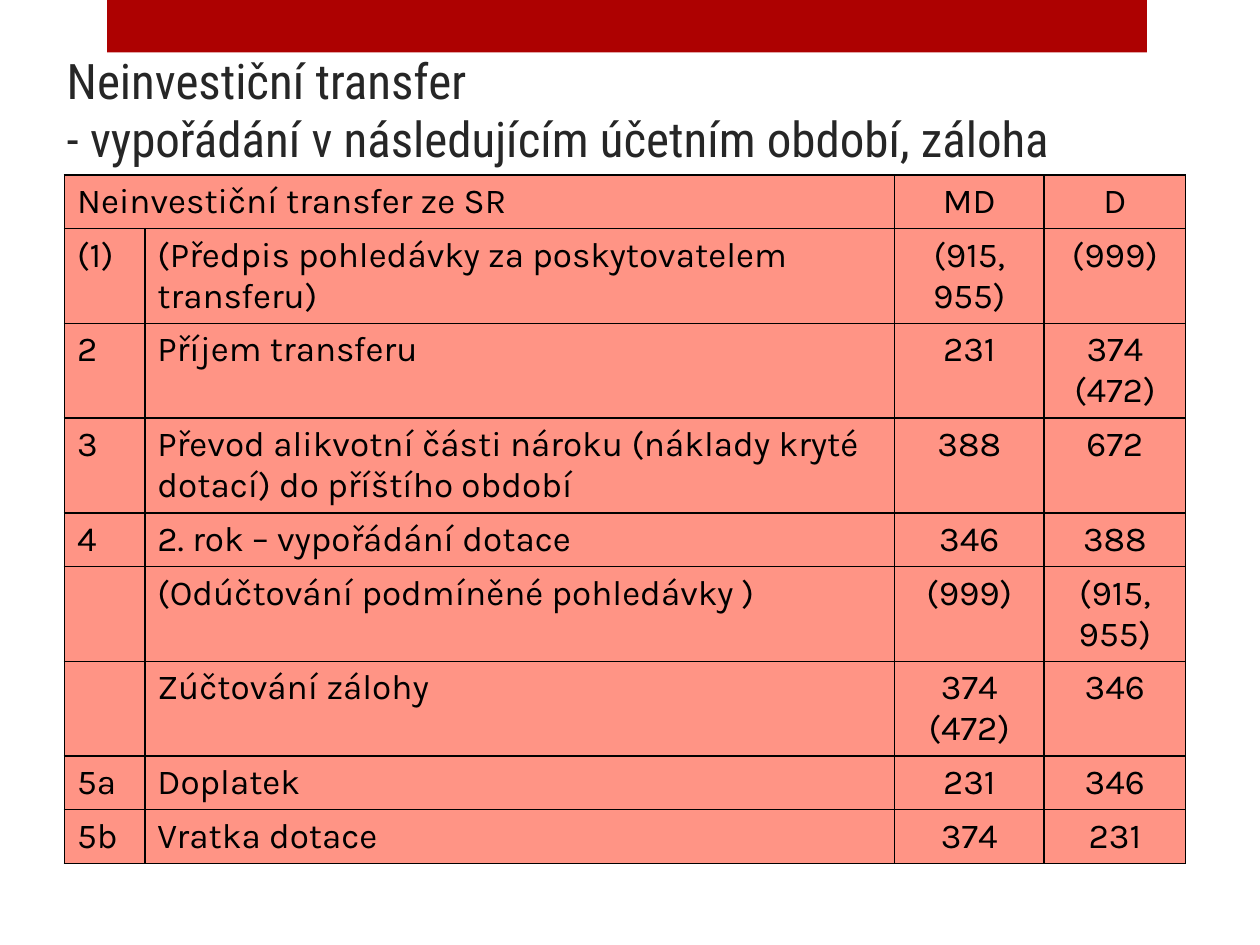
"""Build a slide with a table of accounting entries for a non-investment transfer."""
from dataclasses import dataclass

from lxml import etree
from pptx import Presentation
from pptx import util as u
from pptx.dml.color import RGBColor as Rgb
from pptx.enum import shapes, text
from pptx.oxml import ns


@dataclass(frozen=True)
class Theme:
    red: str = "AD0101"
    pink: str = "FF9485"
    dark: str = "262626"
    black: str = "000000"
    head: str = "Roboto Condensed"
    body: str = "Karla"
    big: int = 28
    small: int = 20
    line: int = 1


THEME = Theme()
TITLE = "Neinvestiční transfer \v- vypořádání v následujícím účetním období, záloha"
WIDTHS = (1.62, 15.11, 3.02, 2.85)
LOW, TALL = 1.08, 1.91
ROWS = (
    (LOW, "Neinvestiční transfer ze SR", "", "MD", "D"),
    (TALL, "(1)", "(Předpis pohledávky za poskytovatelem transferu)", "(915,\n955)", "(999)"),
    (TALL, "2", "Příjem transferu", "231", "374 (472)"),
    (TALL, "3", "Převod alikvotní části nároku (náklady kryté dotací) do příštího období",
     "388", "672"),
    (LOW, "4", "2. rok – vypořádání dotace", "346", "388"),
    (TALL, "", "(Odúčtování podmíněné pohledávky )", "(999)", "(915,\n955)"),
    (TALL, "", "Zúčtování zálohy", "374 (472)", "346"),
    (LOW, "5a", "Doplatek", "231", "346"),
    (LOW, "5b", "Vratka dotace", "374", "231"),
)


def style(para, face, size, color):
    """Set the font of a paragraph."""
    para.font.name = face
    para.font.size = u.Pt(size)
    para.font.color.rgb = Rgb.from_string(color)


def add_bar(slide):
    """Draw the red bar at the top edge."""
    bar = slide.shapes.add_shape(
        shapes.MSO_SHAPE.RECTANGLE, u.Cm(2.16), 0, u.Cm(20.96), u.Cm(1.06))
    bar.shadow.inherit = False
    bar.fill.solid()
    bar.fill.fore_color.rgb = Rgb.from_string(THEME.red)
    bar.line.fill.background()


def set_title(slide):
    """Place and fill the title placeholder."""
    title = slide.shapes.title
    title.left, title.top = u.Cm(1.09), u.Cm(1.12)
    title.width, title.height = u.Cm(23.01), u.Cm(2.39)
    frame = title.text_frame
    frame.text = TITLE
    frame.word_wrap = True
    frame.auto_size = text.MSO_AUTO_SIZE.NONE
    frame.vertical_anchor = text.MSO_ANCHOR.BOTTOM
    para = frame.paragraphs[0]
    para.alignment = text.PP_ALIGN.LEFT
    style(para, THEME.head, THEME.big, THEME.dark)


def add_edges(cell):
    """Give a cell a solid line on all four sides."""
    props = cell._tc.get_or_add_tcPr()
    for side in "LRTB":
        edge = etree.SubElement(props, ns.qn(f"a:ln{side}"), w=str(u.Pt(THEME.line)))
        fill = etree.SubElement(edge, ns.qn("a:solidFill"))
        etree.SubElement(fill, ns.qn("a:srgbClr"), val=THEME.black)


def fill_cell(cell, words, align):
    """Write and format one table cell."""
    cell.text = words
    add_edges(cell)
    cell.fill.solid()
    cell.fill.fore_color.rgb = Rgb.from_string(THEME.pink)
    for para in cell.text_frame.paragraphs:
        para.alignment = align
        style(para, THEME.body, THEME.small, THEME.black)


def add_grid(slide):
    """Add the table of entries and accounts."""
    high = sum(row[0] for row in ROWS)
    grid = slide.shapes.add_table(
        len(ROWS), len(WIDTHS), u.Cm(1.3), u.Cm(3.53),
        u.Cm(sum(WIDTHS)), u.Cm(high)).table
    for col, width in zip(grid.columns, WIDTHS):
        col.width = u.Cm(width)
    for r, (height, *cells) in enumerate(ROWS):
        grid.rows[r].height = u.Cm(height)
        for c, words in enumerate(cells):
            align = text.PP_ALIGN.LEFT if c < 2 else text.PP_ALIGN.CENTER
            fill_cell(grid.cell(r, c), words, align)
    grid.cell(0, 0).merge(grid.cell(0, 1))


def main():
    """Build and save the slide."""
    deck = Presentation()
    deck.slide_width, deck.slide_height = u.Cm(25.4), u.Cm(19.05)
    slide = deck.slides.add_slide(deck.slide_layouts[5])
    add_bar(slide)
    set_title(slide)
    add_grid(slide)
    deck.save("out.pptx")


if __name__ == "__main__":
    main()
